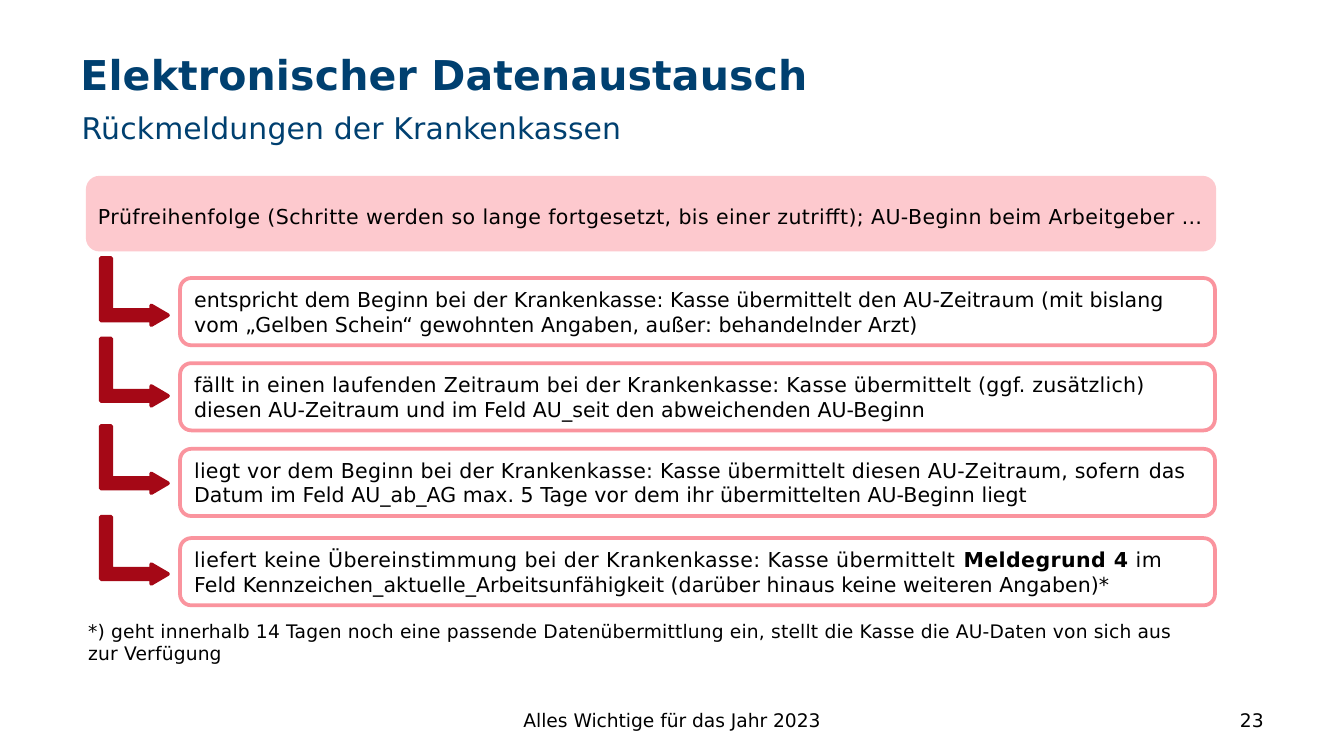
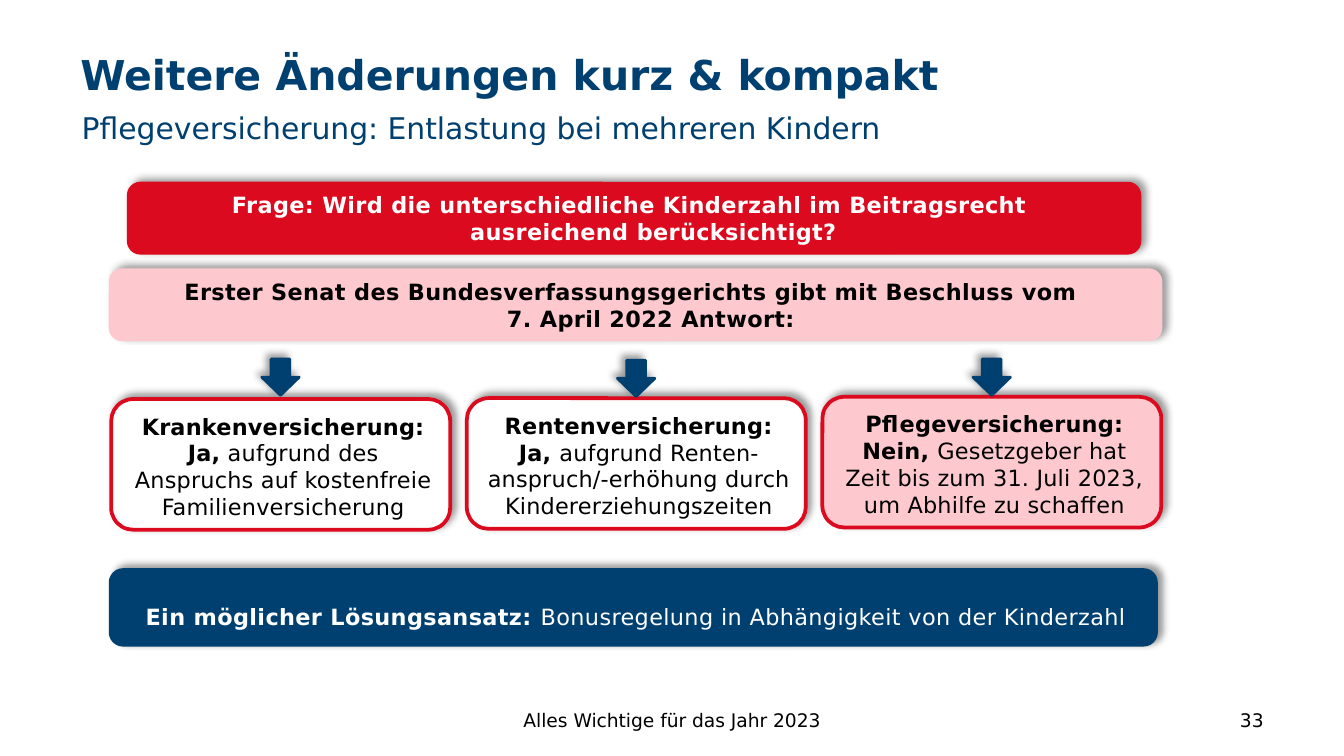
"""Build two slides on electronic data exchange and long-term care insurance."""
from copy import deepcopy

from lxml.etree import SubElement
from pptx import Presentation
from pptx.dml.color import RGBColor
from pptx.enum.shapes import MSO_SHAPE as Preset
from pptx.enum.text import MSO_ANCHOR as Anchor, PP_ALIGN as Align
from pptx.oxml.ns import qn
from pptx.util import Pt

COLORS = {
    "navy": "004070",
    "red": "DC0A1E",
    "dark_red": "A50816",
    "rose": "FA949E",
    "pink": "FDC9CE",
    "white": "FFFFFF",
    "black": "000000",
}
FONT = "DejaVu Sans"
TEXT_INSETS = (7.2, 3.6, 7.2, 3.6)
STEP_INSETS = (5.8, 5.8, 2.2, 5.8)
CARD_INSETS = (5.8, 5.8, 2.9, 3.6)


def add_box(shapes, preset, frame, fill, line, line_width, shadow_angle=None):
    shape = shapes.add_shape(preset, *map(Pt, frame))
    shape.fill.solid()
    shape.fill.fore_color.rgb = RGBColor.from_string(COLORS[fill])
    shape.line.color.rgb = RGBColor.from_string(COLORS[line])
    shape.line.width = Pt(line_width)
    shape.shadow.inherit = False
    if shadow_angle is not None:
        effects = shape._element.spPr.find(qn("a:effectLst"))
        outer = SubElement(effects, qn("a:outerShdw"), blurRad=str(Pt(4)), dist=str(Pt(3)),
                           dir=str(shadow_angle * 60000), rotWithShape="0")
        color = SubElement(outer, qn("a:srgbClr"), val=COLORS["black"])
        SubElement(color, qn("a:alpha"), val="40000")
    return shape


def write_text(shape, runs, size, color="black", align=Align.LEFT, anchor=Anchor.MIDDLE,
               insets=TEXT_INSETS, margin=0, indent=0, line_spacing=None):
    frame = shape.text_frame
    frame.word_wrap = True
    frame.vertical_anchor = anchor
    frame.margin_left, frame.margin_top, frame.margin_right, frame.margin_bottom = map(Pt, insets)
    paragraph = frame.paragraphs[0]
    paragraph.alignment = align
    if line_spacing:
        paragraph.line_spacing = Pt(line_spacing)
    properties = paragraph._p.get_or_add_pPr()
    properties.set("marL", str(Pt(margin)))
    properties.set("indent", str(Pt(indent)))
    for text, bold, spacing in runs:
        for number, part in enumerate(text.split("\n")):
            if number:
                paragraph.add_line_break()
                paragraph._p[-1].append(deepcopy(run._r.rPr))
            run = paragraph.add_run()
            run.text = part
            run.font.name = FONT
            run.font.size = Pt(size)
            run.font.bold = bold
            run.font.color.rgb = RGBColor.from_string(COLORS[color])
            run._r.rPr.set("spc", str(round(spacing * 100)))


presentation = Presentation()
presentation.slide_width = Pt(720)
presentation.slide_height = Pt(405)

slides = []
for title, subtitle, spacing, page in [
    ("Elektronischer Datenaustausch", "Rückmeldungen der Krankenkassen", 0.1, "23"),
    ("Weitere Änderungen kurz & kompakt",
     "Pflegeversicherung: Entlastung bei mehreren Kindern", 0, "33"),
]:
    slide = presentation.slides.add_slide(presentation.slide_layouts[6])
    slides.append(slide)
    for frame, text, bold, gap, size, color, align, anchor in [
        ((36, 23, 584, 32), title, True, spacing, 22, "navy", Align.LEFT, Anchor.TOP),
        ((36.7, 55, 584, 20), subtitle, False, spacing, 16, "navy", Align.LEFT, Anchor.TOP),
        ((246, 375, 228, 22), "Alles Wichtige für das Jahr 2023", False, 0, 10, "black",
         Align.CENTER, Anchor.MIDDLE),
        ((516, 375, 168, 22), page, False, 0, 10, "black", Align.RIGHT, Anchor.MIDDLE),
    ]:
        box = slide.shapes.add_textbox(*map(Pt, frame))
        write_text(box, [(text, bold, gap)], size, color, align, anchor)

exchange, care = slides

heading = add_box(exchange.shapes, Preset.ROUNDED_RECTANGLE, (46.8, 95, 604, 39),
                  "pink", "pink", 1.5)
write_text(heading, [("Prüfreihenfolge (Schritte werden so lange fortgesetzt, bis einer zutrifft); "
                      "AU-Beginn beim Arbeitgeber …", False, 0.2)],
           11, align=Align.CENTER, insets=(0, 1.4, 0, 1.4), line_spacing=16)

steps = [
    (149, 138.2, [
        ("entspricht dem Beginn bei der Krankenkasse: Kasse übermittelt den AU-Zeitraum (mit "
         "bislang vom „Gelben Schein“ gewohnten Angaben, außer: behandelnder Arzt)", False, 0)]),
    (194.6, 181.4, [
        ("fällt in einen laufenden Zeitraum bei der Krankenkasse: Kasse übermittelt "
         "(ggf. zusätzlich) ", False, 0.1),
        ("diesen AU-Zeitraum und im Feld AU_seit den abweichenden AU-Beginn", False, 0)]),
    (240.5, 228.2, [
        ("liegt vor dem Beginn bei der Krankenkasse: Kasse übermittelt diesen AU-Zeitraum, "
         "sofern ", False, 0.1),
        ("das Datum im Feld AU_ab_AG max. 5 Tage vor dem ihr übermittelten AU-Beginn liegt",
         False, 0)]),
    (288.3, 276.8, [
        ("liefert keine Übereinstimmung bei der Krankenkasse: Kasse übermittelt ", False, 0.2),
        ("Meldegrund 4", True, 0.2),
        (" im ", False, 0.2),
        ("Feld Kennzeichen_aktuelle_Arbeitsunfähigkeit (darüber hinaus keine weiteren Angaben)*",
         False, 0)]),
]
for box_top, arrow_top, runs in steps:
    step = add_box(exchange.shapes, Preset.ROUNDED_RECTANGLE, (96.5, box_top, 554.4, 36),
                   "white", "rose", 2)
    fill_color = step._element.spPr.find(qn("a:solidFill"))[0]
    SubElement(fill_color, qn("a:alpha"), val="90000")
    write_text(step, runs, 11, insets=STEP_INSETS)
    arrow = add_box(exchange.shapes, Preset.BENT_UP_ARROW, (54, arrow_top, 36, 36),
                    "dark_red", "dark_red", 2)
    arrow.rotation = 90
    for index, value in enumerate((0.154, 0.146, 0.25)):
        arrow.adjustments[index] = value

footnote = exchange.shapes.add_textbox(*map(Pt, (12.2, 328.3, 638.6, 31.7)))
write_text(footnote, [("*) geht innerhalb 14 Tagen noch eine passende Datenübermittlung ein, "
                       "stellt die Kasse die AU-Daten von sich aus zur Verfügung", False, 0.1)],
           10, anchor=Anchor.TOP, margin=28)

cards = [
    ("white", 213.8, 192.4, [
        ("Krankenversicherung:\nJa,", True, 0.1),
        (" aufgrund des\nAnspruchs auf kostenfreie Familienversicherung", False, 0.1)]),
    ("white", 213.3, 193, [
        ("Rentenversicherung:\nJa, ", True, 0.1),
        ("aufgrund Renten-anspruch/-erhöhung durch Kindererziehungszeiten", False, 0.1)]),
    ("pink", 212.6, 192.4, [
        ("Pflegeversicherung:\nNein, ", True, 0.1),
        ("Gesetzgeber hat\nZeit bis zum 31. Juli 2023,\num Abhilfe zu schaffen", False, 0.1)]),
]
for column, (fill, card_top, arrow_top, runs) in enumerate(cards):
    left = 59.6 + column * 190.5
    group = care.shapes.add_group_shape()
    card = add_box(group.shapes, Preset.ROUNDED_RECTANGLE, (left, card_top, 181.6, 70),
                   fill, "red", 2, 315)
    write_text(card, runs, 12, align=Align.CENTER, insets=CARD_INSETS)
    add_box(group.shapes, Preset.DOWN_ARROW, (left + 80.7, arrow_top, 20, 19.4),
            "navy", "navy", 1.5, 225)

bars = [
    ((69, 98.4, 541.4, 37), "red", "white", TEXT_INSETS, 21, None, [
        ("Frage: Wird die unterschiedliche Kinderzahl im Beitragsrecht \n"
         "ausreichend berücksichtigt?", True, 0.2)]),
    ((59.3, 144.8, 562.4, 37), "pink", "black", TEXT_INSETS, 21, None, [
        ("Erster Senat des Bundesverfassungsgerichts gibt mit Beschluss vom \n"
         "7. April 2022 Antwort: ", True, 0.2)]),
    ((59.3, 305.4, 560, 40), "navy", "white", CARD_INSETS, 0, 22, [
        ("Ein möglicher Lösungsansatz: ", True, 0.2),
        ("Bonusregelung in Abhängigkeit von der Kinderzahl", False, 0.2)]),
]
for frame, fill, color, insets, margin, line_spacing, runs in bars:
    bar = add_box(care.shapes, Preset.ROUNDED_RECTANGLE, frame, fill, fill, 2, 315)
    write_text(bar, runs, 12, color, Align.CENTER, insets=insets, margin=margin,
               indent=-margin, line_spacing=line_spacing)

presentation.save("out.pptx")
